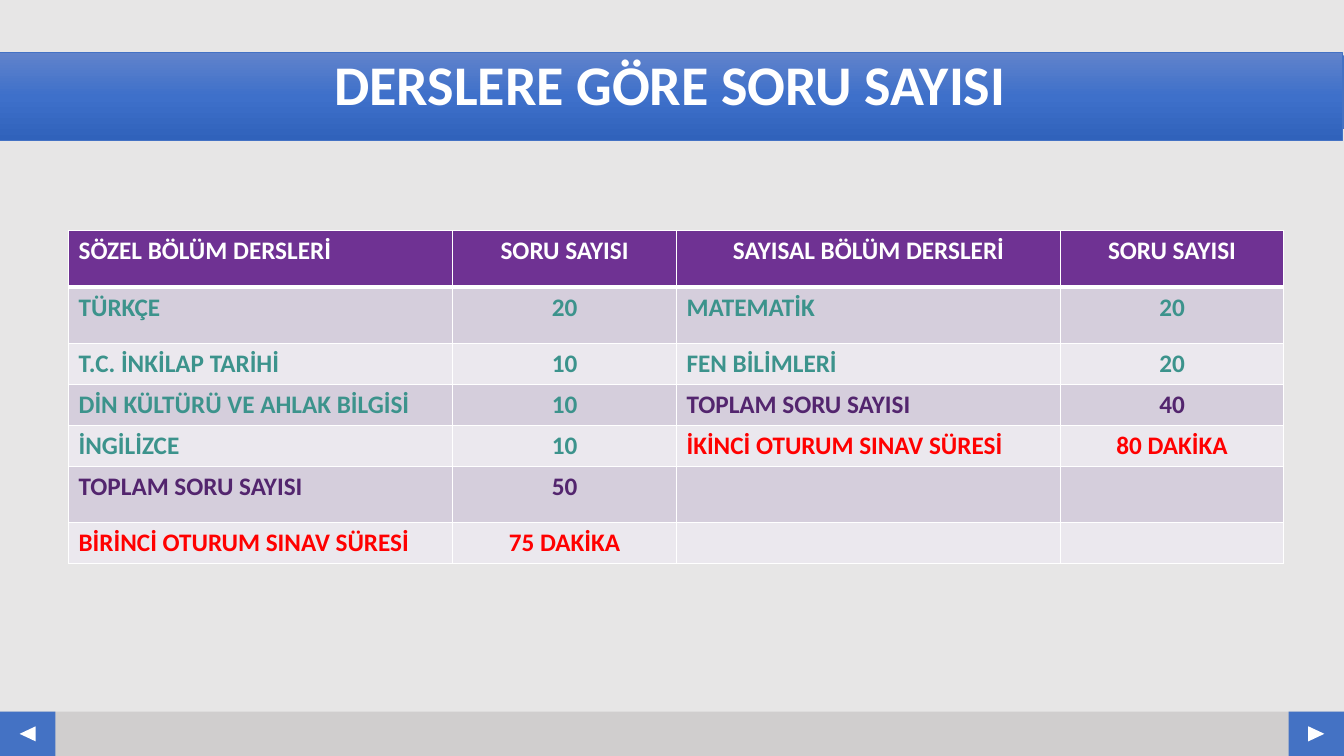
from lxml import etree
from pptx import Presentation
from pptx.dml.color import RGBColor
from pptx.enum.shapes import MSO_SHAPE
from pptx.enum.text import MSO_ANCHOR, MSO_AUTO_SIZE, PP_ALIGN
from pptx.oxml.ns import qn
from pptx.util import Inches, Pt

CENTER, LEFT = PP_ALIGN.CENTER, PP_ALIGN.LEFT
TOP, NO_AUTOFIT = MSO_ANCHOR.TOP, MSO_AUTO_SIZE.NONE
RECTANGLE, TRIANGLE = MSO_SHAPE.RECTANGLE, MSO_SHAPE.ISOSCELES_TRIANGLE

WHITE = RGBColor(0xFF, 0xFF, 0xFF)
BACKGROUND = RGBColor(0xE7, 0xE6, 0xE6)
FOOTER_GRAY = RGBColor(0xD0, 0xCE, 0xCE)
BLUE = RGBColor(0x44, 0x72, 0xC4)
BAND_TOP = RGBColor(0x61, 0x83, 0xCB)
BAND_MIDDLE = RGBColor(0x3E, 0x70, 0xCA)
BAND_BOTTOM = RGBColor(0x30, 0x62, 0xBB)
PURPLE = RGBColor(0x6F, 0x32, 0x93)
DARK_PURPLE = RGBColor(0x53, 0x25, 0x6E)
DARK_ROW = RGBColor(0xD5, 0xCE, 0xDC)
LIGHT_ROW = RGBColor(0xEB, 0xE8, 0xEE)
TEAL = RGBColor(0x3C, 0x93, 0x8C)
RED = RGBColor(0xFF, 0x00, 0x00)

FONT = "Calibri"
GRID = Inches(0.01)
GRID_COLUMNS, GRID_ROWS = 1333, 750
FOOTER_HEIGHT, BUTTON_WIDTH = 44, 55
ARROW_WIDTH, ARROW_HEIGHT = 15, 16
COLUMN_WIDTHS = (381, 222, 381, 221)
TALL, SHORT = 56, 40
ROW_HEIGHTS = (TALL, TALL, SHORT, SHORT, SHORT, TALL, SHORT)

COURSES = (
    ("SÖZEL BÖLÜM DERSLERİ", "SORU SAYISI", "SAYISAL BÖLÜM DERSLERİ", "SORU SAYISI"),
    ("TÜRKÇE", "20", "MATEMATİK", "20"),
    ("T.C. İNKİLAP TARİHİ", "10", "FEN BİLİMLERİ", "20"),
    ("DİN KÜLTÜRÜ VE AHLAK BİLGİSİ", "10", "TOPLAM SORU SAYISI", "40"),
    ("İNGİLİZCE", "10", "İKİNCİ OTURUM SINAV SÜRESİ", "80 DAKİKA"),
    ("TOPLAM SORU SAYISI", "50", "", ""),
    ("BİRİNCİ OTURUM SINAV SÜRESİ", "75 DAKİKA", "", ""),
)


def grid_box(*units):
    return [round(unit * GRID) for unit in units]


def format_paragraph(para, size, color, alignment):
    para.alignment = alignment
    para.font.size = Pt(size)
    for span in para.runs:
        span.font.name = FONT
        span.font.size = Pt(size)
        span.font.bold = True
        span.font.color.rgb = color


def add_block(page, kind, box, color, rotation=0):
    block = page.shapes.add_shape(kind, *grid_box(*box))
    block.shadow.inherit = False
    block.fill.solid()
    block.fill.fore_color.rgb = color
    block.line.fill.background()
    block.rotation = rotation


def add_navigation_button(page, left, rotation):
    top = GRID_ROWS - FOOTER_HEIGHT
    add_block(page, RECTANGLE, (left, top, BUTTON_WIDTH, FOOTER_HEIGHT), BLUE)
    arrow_left = left + (BUTTON_WIDTH - ARROW_WIDTH) / 2
    arrow_top = top + (FOOTER_HEIGHT - ARROW_HEIGHT) / 2
    arrow_box = (arrow_left, arrow_top, ARROW_WIDTH, ARROW_HEIGHT)
    add_block(page, TRIANGLE, arrow_box, WHITE, rotation)


def add_footer(page):
    top = GRID_ROWS - FOOTER_HEIGHT
    add_block(page, RECTANGLE, (0, top, GRID_COLUMNS, FOOTER_HEIGHT), FOOTER_GRAY)
    add_navigation_button(page, 0, 270)
    add_navigation_button(page, GRID_COLUMNS - BUTTON_WIDTH, 90)


def fill_vertical_gradient(shape, colors):
    shape.fill.gradient()
    shape.fill.gradient_angle = 270
    stops = shape.element.find(".//" + qn("a:gsLst"))
    for stop in list(stops):
        stops.remove(stop)
    for index, color in enumerate(colors):
        position = round(index * 100000 / (len(colors) - 1))
        stop = etree.SubElement(stops, qn("a:gs"), pos=str(position))
        etree.SubElement(stop, qn("a:srgbClr"), val=str(color))


def add_title(page, text):
    title = page.shapes.title
    title.left, title.top, title.width, title.height = grid_box(-2, 52, GRID_COLUMNS, 87)
    fill_vertical_gradient(title, (BAND_TOP, BAND_MIDDLE, BAND_BOTTOM))
    title.line.color.rgb = BLUE
    title.line.width = Pt(0.5)
    frame = title.text_frame
    frame.text = text
    frame.auto_size = NO_AUTOFIT
    frame.vertical_anchor = TOP
    para = frame.paragraphs[0]
    para.line_spacing = 0.9
    format_paragraph(para, 40, WHITE, CENTER)
    title.element.getparent().append(title.element)


def add_borders(cell, widths):
    properties = cell._tc.get_or_add_tcPr()
    for side, width in widths.items():
        border = etree.SubElement(properties, qn("a:ln" + side), w=str(Pt(width)))
        fill = etree.SubElement(border, qn("a:solidFill"))
        etree.SubElement(fill, qn("a:srgbClr"), val=str(WHITE))


def course_color(label):
    if label.startswith("TOPLAM"):
        return DARK_PURPLE
    return RED if "SÜRESİ" in label else TEAL


def fill_course_cell(cell, row, column):
    header = row == 0
    label = COURSES[row][column - column % 2]
    centered = column % 2 == 1 or (header and column == 2)
    add_borders(cell, {
        "L": 1, "R": 1, "T": 3 if row == 1 else 1, "B": 3 if header else 1,
    })
    cell.fill.solid()
    cell.fill.fore_color.rgb = PURPLE if header else DARK_ROW if row % 2 else LIGHT_ROW
    cell.text = COURSES[row][column]
    format_paragraph(
        cell.text_frame.paragraphs[0],
        18,
        WHITE if header else course_color(label),
        CENTER if centered else LEFT,
    )


def add_course_table(page):
    box = grid_box(68, 229, sum(COLUMN_WIDTHS), sum(ROW_HEIGHTS))
    table = page.shapes.add_table(len(ROW_HEIGHTS), len(COLUMN_WIDTHS), *box).table
    for column, width in zip(table.columns, COLUMN_WIDTHS):
        column.width = width * GRID
    for row, height in enumerate(ROW_HEIGHTS):
        table.rows[row].height = height * GRID
        for column in range(len(COLUMN_WIDTHS)):
            fill_course_cell(table.cell(row, column), row, column)


def main():
    deck = Presentation()
    deck.slide_width, deck.slide_height = grid_box(GRID_COLUMNS, GRID_ROWS)
    page = deck.slides.add_slide(deck.slide_layouts.get_by_name("Title Only"))
    page.background.fill.solid()
    page.background.fill.fore_color.rgb = BACKGROUND
    add_footer(page)
    add_block(page, RECTANGLE, (1326, 55, 7, 73), BLUE)
    add_title(page, "DERSLERE GÖRE SORU SAYISI")
    add_course_table(page)
    deck.save("out.pptx")


if __name__ == "__main__":
    main()
